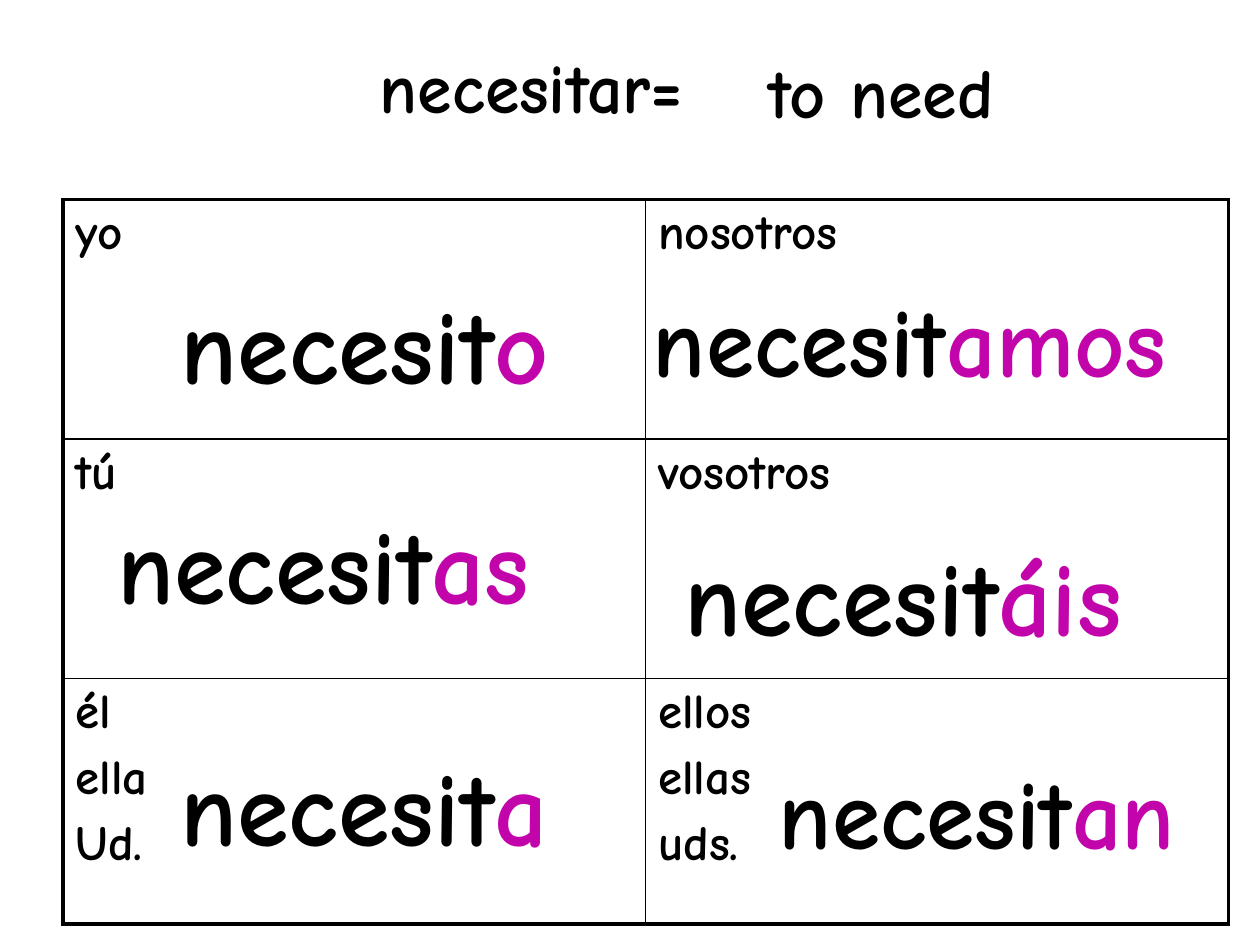
from dataclasses import dataclass

from lxml import etree
from pptx import Presentation
from pptx.dml.color import RGBColor
from pptx.enum.text import MSO_ANCHOR, MSO_AUTO_SIZE
from pptx.oxml.ns import qn
from pptx.util import Emu, Inches, Pt

MIDDLE, TOP = MSO_ANCHOR.MIDDLE, MSO_ANCHOR.TOP
GROW, FIXED = MSO_AUTO_SIZE.SHAPE_TO_FIT_TEXT, MSO_AUTO_SIZE.NONE

FONT = "Comic Neue"
BLACK, MAGENTA = "000000", "C204AB"
OUTER_LINE, INNER_LINE = 2.25, 1
STEM = "necesit"

# The slide is laid out on a grid of 120 columns by 90 rows
GRID_STEP = Inches(10) / 120


@dataclass
class Box:
    left: float
    top: float
    width: float
    height: float

    def lengths(self) -> list[Emu]:
        return [grid(n) for n in (self.left, self.top, self.width, self.height)]


@dataclass
class VerbForm:
    ending: str
    box: Box
    size: int = 60


TITLE_BOX = Box(35, 3, 63, 15)
MEANING_BOX = Box(72, 4, 27.1, 9.2)
TABLE_BOX = Box(6, 19, 111, 69)
ROW_HEIGHTS = (22.8, 22.8, 23.4)

PRONOUNS = [
    [["yo"], ["nosotros"]],
    [["tú"], ["vosotros"]],
    [["él", "ella", "Ud."], ["ellos", "ellas", "uds."]],
]

VERB_FORMS = [
    VerbForm("o", Box(16, 26, 44, 13.3)),
    VerbForm("as", Box(10, 47, 49, 13.3)),
    VerbForm("a", Box(16, 70, 43, 13.3)),
    VerbForm("amos", Box(61, 26, 63, 12.5), size=56),
    VerbForm("an", Box(73, 71, 49, 12.5), size=56),
    VerbForm("áis", Box(64, 50, 52.3, 13.3)),
]


def grid(steps: float) -> Emu:
    return Emu(round(steps * GRID_STEP))


def colour(value: str) -> RGBColor:
    return RGBColor.from_string(value)


def add_text(paragraph, text: str, *, size: float, color: str = BLACK) -> None:
    run = paragraph.add_run()
    run.text = text
    run.font.name = FONT
    run.font.size = Pt(size)
    run.font.bold = True
    run.font.color.rgb = colour(color)


def add_text_box(slide, box: Box, *, wrap: bool = True, auto_size=GROW, anchor=TOP):
    frame = slide.shapes.add_textbox(*box.lengths()).text_frame
    frame.word_wrap = wrap
    frame.auto_size = auto_size
    frame.vertical_anchor = anchor
    return frame


def set_borders(cell, widths: dict[str, float]) -> None:
    properties = cell._tc.get_or_add_tcPr()
    for position, (side, width) in enumerate(widths.items()):
        line = etree.Element(qn(f"a:ln{side}"), w=str(Pt(width)))
        fill = etree.SubElement(line, qn("a:solidFill"))
        etree.SubElement(fill, qn("a:srgbClr"), val=BLACK)
        properties.insert(position, line)


def add_pronoun_table(slide) -> None:
    row_count, column_count = len(PRONOUNS), len(PRONOUNS[0])
    table = slide.shapes.add_table(row_count, column_count, *TABLE_BOX.lengths()).table
    table.first_row = table.horz_banding = False
    for row, height in zip(table.rows, ROW_HEIGHTS):
        row.height = grid(height)

    for row_index, row in enumerate(PRONOUNS):
        for column_index, pronouns in enumerate(row):
            cell = table.cell(row_index, column_index)
            cell.fill.background()
            on_edge = {
                "L": column_index == 0,
                "R": column_index == column_count - 1,
                "T": row_index == 0,
                "B": row_index == row_count - 1,
            }
            set_borders(cell, {side: OUTER_LINE if edge else INNER_LINE
                               for side, edge in on_edge.items()})
            frame = cell.text_frame
            for index, pronoun in enumerate(pronouns):
                paragraph = frame.add_paragraph() if index else frame.paragraphs[0]
                paragraph.space_before = Pt(5.6 if index else 0)
                add_text(paragraph, pronoun, size=28)


def add_verb_form(slide, form: VerbForm) -> None:
    paragraph = add_text_box(slide, form.box).paragraphs[0]
    add_text(paragraph, STEM, size=form.size)
    add_text(paragraph, form.ending, size=form.size, color=MAGENTA)


def main() -> None:
    presentation = Presentation()
    presentation.slide_width, presentation.slide_height = grid(120), grid(90)
    slide = presentation.slides.add_slide(presentation.slide_layouts[6])

    # Heading: the infinitive, set a little above the middle of its box
    title = add_text_box(slide, TITLE_BOX, auto_size=FIXED, anchor=MIDDLE)
    title.margin_bottom = Inches(0.44)
    add_text(title.paragraphs[0], "necesitar=", size=40)

    # Conjugation chart
    add_pronoun_table(slide)
    for form in VERB_FORMS:
        add_verb_form(slide, form)

    # Heading: the meaning
    meaning = add_text_box(slide, MEANING_BOX, wrap=False)
    add_text(meaning.paragraphs[0], "to need", size=40)

    presentation.save("out.pptx")


if __name__ == "__main__":
    main()
